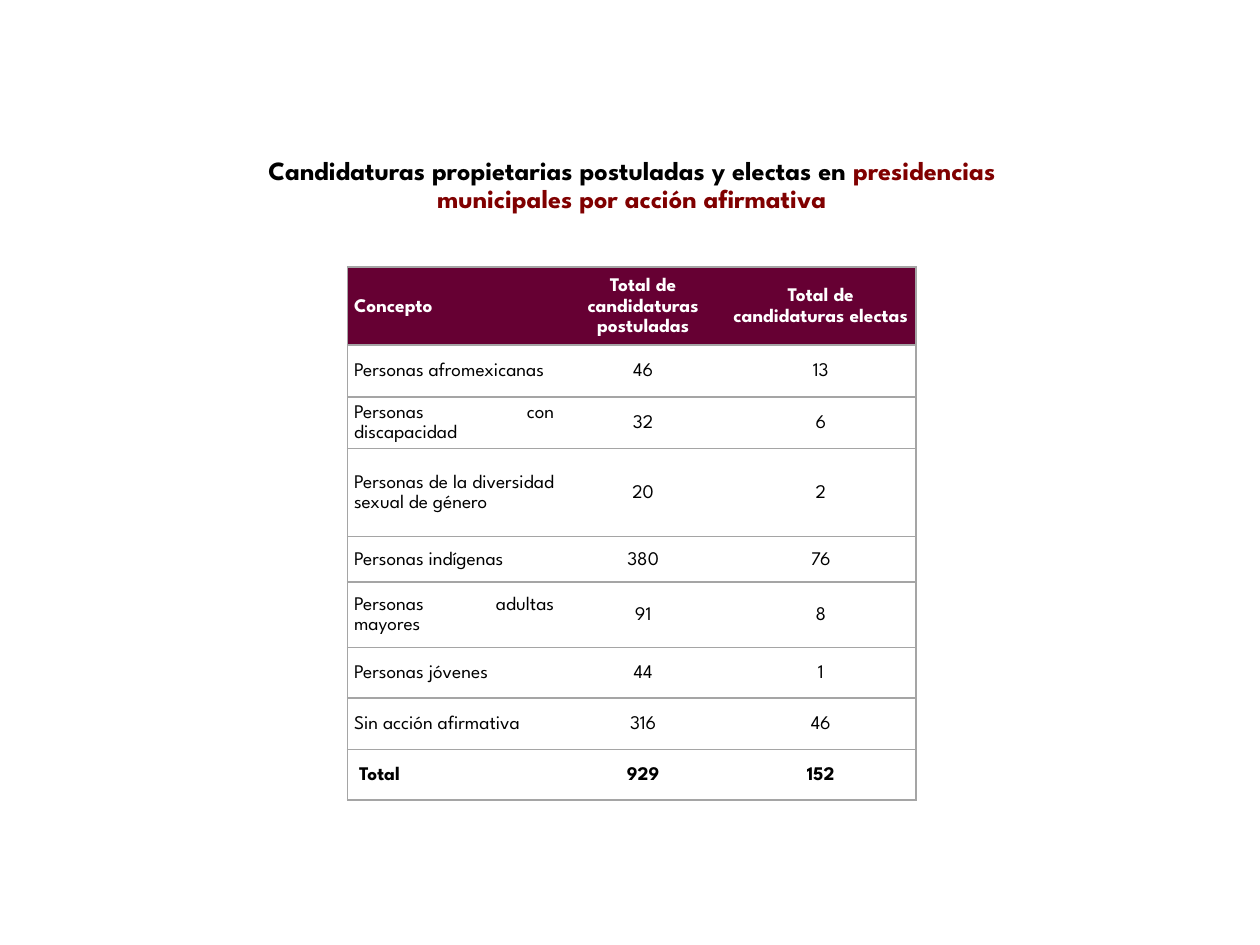
import pptx
import pptx.dml.color
import pptx.enum.text
import pptx.oxml
import pptx.oxml.ns
import pptx.util
from pptx.util import Inches

RGBColor = pptx.dml.color.RGBColor
ALIGN = pptx.enum.text.PP_ALIGN
ANCHOR = pptx.enum.text.MSO_ANCHOR

BLACK = RGBColor(0x00, 0x00, 0x00)
WHITE = RGBColor(0xFF, 0xFF, 0xFF)
RED = RGBColor(0x80, 0x00, 0x00)
WINE = RGBColor(0x66, 0x00, 0x33)
GREY = RGBColor(0xA5, 0xA5, 0xA5)
FONT = "League Spartan"

COLUMN_WIDTHS = [1.69, 1.31, 1.51]
ROW_HEIGHTS = [0.62, 0.41, 0.41, 0.7, 0.36, 0.52, 0.4, 0.41, 0.4]
CANDIDACIES = [
    ("Concepto", "Total de candidaturas postuladas", "Total de candidaturas electas"),
    ("Personas afromexicanas", "46", "13"),
    ("Personas con discapacidad", "32", "6"),
    ("Personas de la diversidad sexual de género", "20", "2"),
    ("Personas indígenas", "380", "76"),
    ("Personas adultas mayores", "91", "8"),
    ("Personas jóvenes", "44", "1"),
    ("Sin acción afirmativa", "316", "46"),
    ("Total", "929", "152"),
]


def add_text(paragraph, text, size=11, color=BLACK, bold=False):
    run = paragraph.add_run()
    run.text = text
    run.font.name = FONT
    run.font.size = pptx.util.Pt(size)
    run.font.bold = bold
    run.font.color.rgb = color


def set_borders(cell, sides):
    properties = cell._tc.get_or_add_tcPr()
    for side in "LRTB":
        fill = "<a:noFill/>"
        if side in sides:
            fill = f'<a:solidFill><a:srgbClr val="{GREY}"/></a:solidFill>'
        properties.append(pptx.oxml.parse_xml(
            f'<a:ln{side} {pptx.oxml.ns.nsdecls("a")} w="12700">{fill}</a:ln{side}>'))


def add_title(slide):
    title = slide.shapes.title
    title.left, title.top = Inches(1.49), Inches(1.04)
    title.width, title.height = Inches(7.05), Inches(0.63)
    frame = title.text_frame
    frame.word_wrap = True
    frame.auto_size = pptx.enum.text.MSO_AUTO_SIZE.NONE
    frame.vertical_anchor = ANCHOR.TOP
    frame.margin_top, frame.margin_bottom = Inches(0.21), 0
    heading = frame.paragraphs[0]
    heading.alignment = ALIGN.CENTER
    heading.line_spacing = 0.9
    add_text(heading, "Candidaturas propietarias postuladas y electas en ",
             size=15, bold=True)
    add_text(heading, "presidencias municipales por acción afirmativa",
             size=15, color=RED, bold=True)


def fill_cell(cell, text, is_header, is_total, is_concept, is_last):
    cell.vertical_anchor = ANCHOR.MIDDLE
    cell.margin_left = Inches(0.09 if is_total and is_concept else 0.05)
    cell.margin_right = Inches(0.05)
    cell.margin_top = cell.margin_bottom = 0
    set_borders(cell, "TB" + ("L" if is_concept else "") + ("R" if is_last else ""))
    cell.fill.solid()
    cell.fill.fore_color.rgb = WINE if is_header else WHITE
    entry = cell.text_frame.paragraphs[0]
    entry.alignment = ALIGN.JUSTIFY if is_concept else ALIGN.CENTER
    entry.line_spacing = 1.15
    entry.space_after = pptx.util.Pt(8)
    add_text(entry, text, color=WHITE if is_header else BLACK,
             bold=is_header or is_total)


def add_candidacy_table(slide):
    last_row, last_column = len(ROW_HEIGHTS) - 1, len(COLUMN_WIDTHS) - 1
    table = slide.shapes.add_table(
        len(ROW_HEIGHTS), len(COLUMN_WIDTHS), Inches(2.76), Inches(2.12),
        Inches(sum(COLUMN_WIDTHS)), Inches(sum(ROW_HEIGHTS))).table
    table.horz_banding = False
    for column, width in zip(table.columns, COLUMN_WIDTHS):
        column.width = Inches(width)
    for row, height in zip(table.rows, ROW_HEIGHTS):
        row.height = Inches(height)
    for r, entries in enumerate(CANDIDACIES):
        for c, text in enumerate(entries):
            fill_cell(table.cell(r, c), text, is_header=r == 0,
                      is_total=r == last_row, is_concept=c == 0,
                      is_last=c == last_column)


def main():
    presentation = pptx.Presentation()
    presentation.slide_width = Inches(10)
    presentation.slide_height = Inches(7.5)
    slide = presentation.slides.add_slide(presentation.slide_layouts[5])
    add_title(slide)
    add_candidacy_table(slide)
    presentation.save("out.pptx")


if __name__ == "__main__":
    main()
